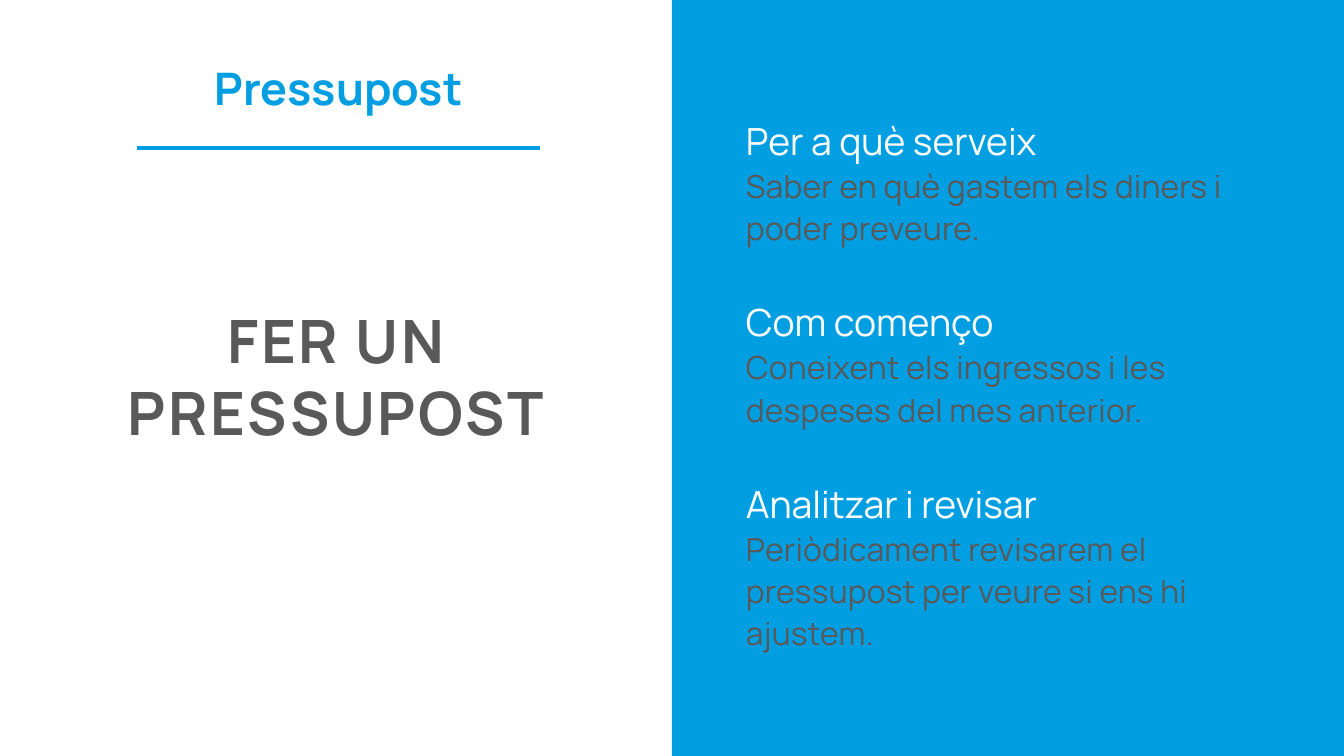
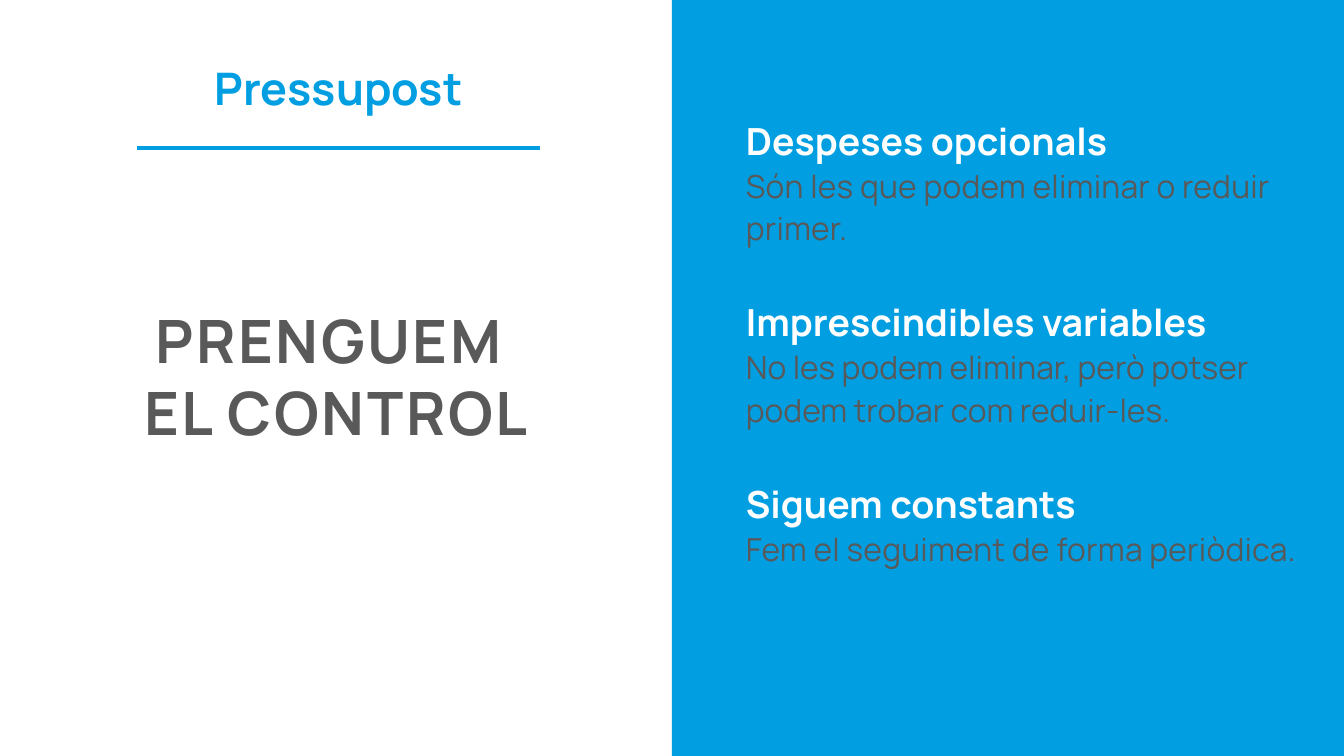
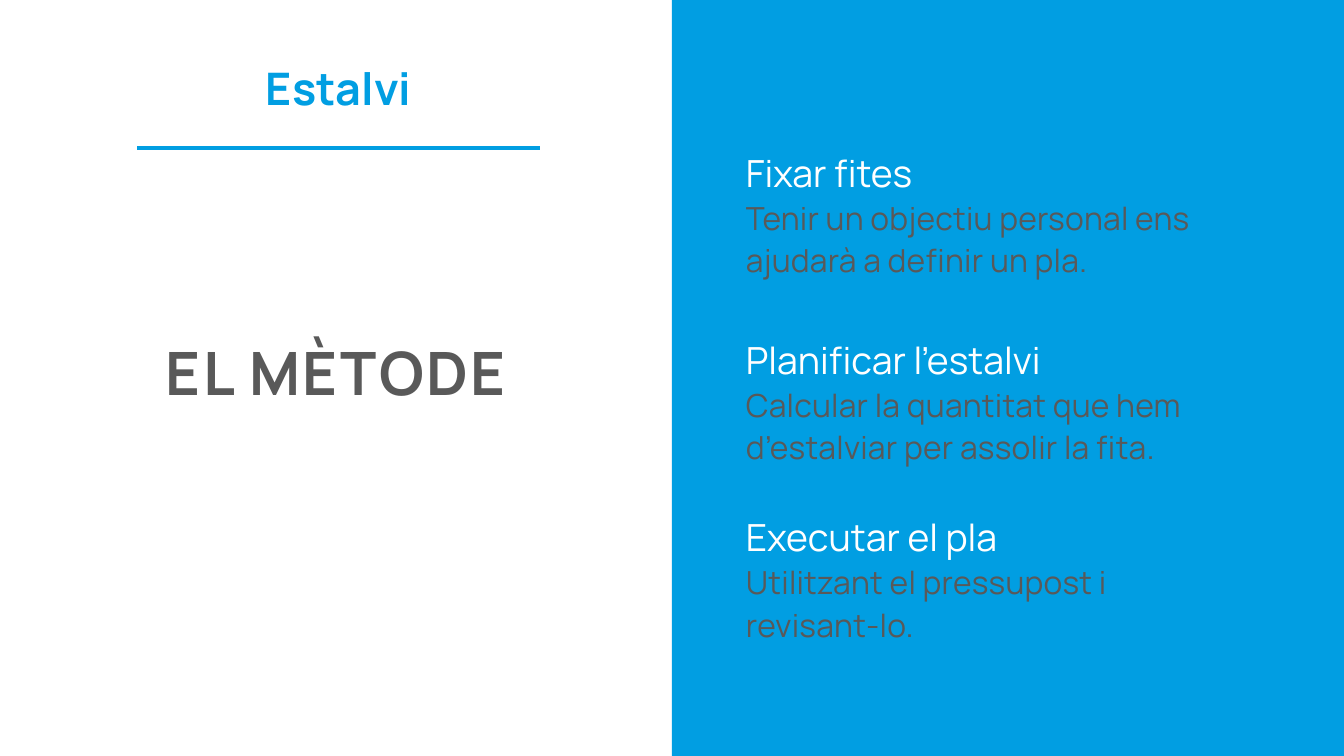
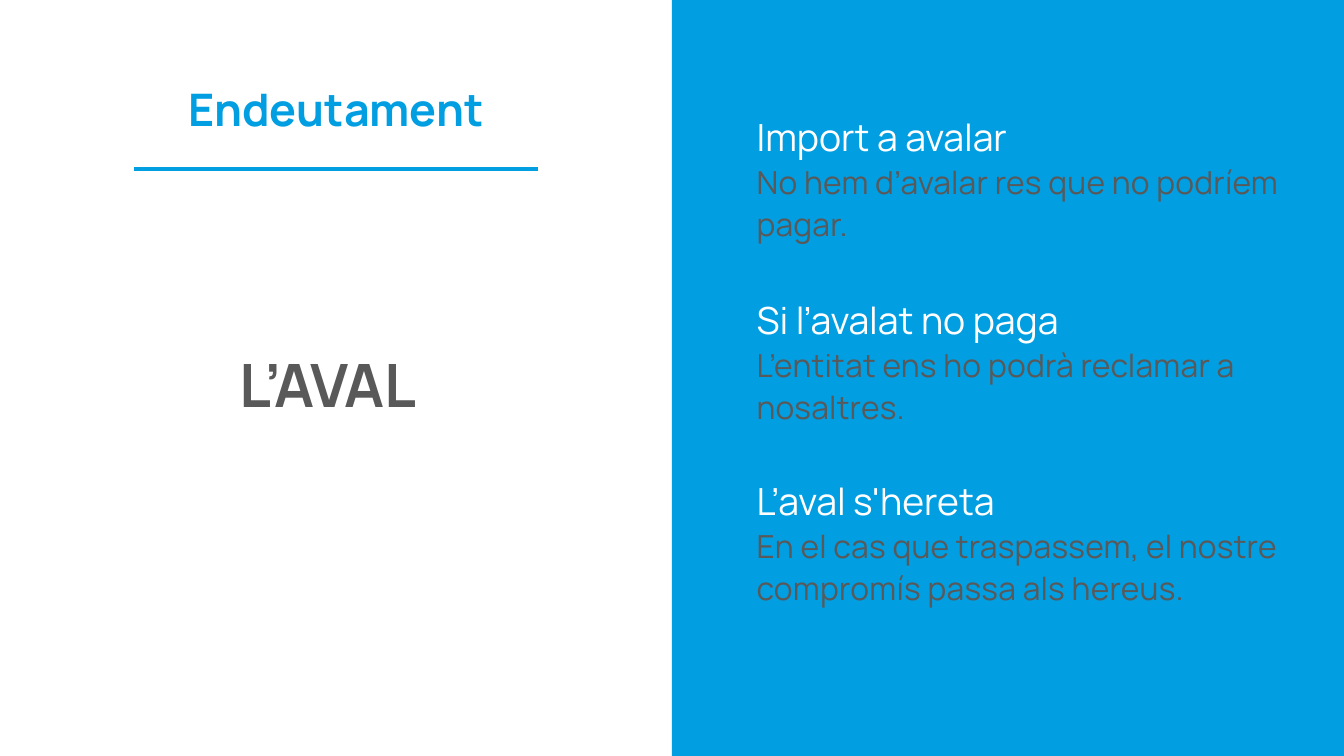
from lxml.etree import SubElement
from pptx import Presentation
from pptx.dml.color import RGBColor
from pptx.enum.shapes import MSO_CONNECTOR, MSO_SHAPE
from pptx.enum.text import MSO_ANCHOR, MSO_AUTO_SIZE, PP_ALIGN
from pptx.oxml.ns import qn
from pptx.util import Inches, Pt

# Content: each section is heading, detail, detail width, detail lines, tracking
SLIDES = [
    {
        "topic": "Pressupost",
        "headline": "FER UN\nPRESSUPOST",
        "sections": [
            ("Per a què serveix",
             "Saber en què gastem els diners i poder preveure.", 4.14, 2, 0.1),
            ("Com començo",
             "Coneixent els ingressos i les despeses del mes anterior.", 4.14, 2, 0.1),
            ("Analitzar i revisar",
             "Periòdicament revisarem el pressupost per veure si ens hi ajustem.", 4.14, 3, 0.1),
        ],
    },
    {
        "topic": "Pressupost",
        "headline": "PRENGUEM \nEL CONTROL",
        "bold_headings": True,
        "sections": [
            ("Despeses opcionals",
             "Són les que podem eliminar o reduir primer.", 4.14, 2, 0.1),
            ("Imprescindibles variables",
             "No les podem eliminar, però potser podem trobar com reduir-les.", 4.14, 2, 0),
            ("Siguem constants",
             "Fem el seguiment de forma periòdica.", 4.14, 3, 0.1),
        ],
    },
    {
        "topic": "Estalvi",
        "headline": "EL MÈTODE",
        "headline_box": (0, 2.5, 5, 0.54),
        "section_tops": (1.11, 2.5, 3.82),
        "sections": [
            ("Fixar fites",
             "Tenir un objectiu personal ens ajudarà a definir un pla.", 4.14, 2, 0.1),
            ("Planificar l’estalvi",
             "Calcular la quantitat que hem d’estalviar per assolir la fita.", 4.14, 2, 0.1),
            ("Executar el pla",
             "Utilitzant el pressupost i revisant-lo.", 3.55, 2, 0.1),
        ],
    },
    {
        "topic": "Endeutament",
        "topic_box": (0, 0.61, 5, 0.4),
        "rule": (1, 1.26),
        "headline": "L’AVAL",
        "headline_box": (0.67, 2.59, 3.54, 0.54),
        "headline_tracking": 0,
        "section_left": 5.63,
        "section_tops": (0.84, 2.2, 3.55),
        "sections": [
            ("Import a avalar",
             "No hem d’avalar res que no podríem pagar.", 4.14, 2, 0.1),
            ("Si l’avalat no paga",
             "L’entitat ens ho podrà reclamar a nosaltres.", 3.94, 2, 0.1),
            ("L’aval s'hereta",
             "En el cas que traspassem, el nostre compromís passa als hereus.", 4.14, 3, 0.1),
        ],
    },
]

# Shared look; a slide may override the layout values
COLORS = {"blue": "019EE2", "grey": "595959", "white": "FFFFFF"}
FONT = "Manrope"
LAYOUT = {
    "topic_box": (0.06, 0.45, 4.92, 0.4),
    "rule": (1.02, 1.1),
    "headline_box": (0, 2.26, 5, 1.08),
    "headline_tracking": 1.4,
    "section_left": 5.55,
    "section_tops": (0.87, 2.22, 3.57),
    "bold_headings": False,
}
SLIDE_W = 10
SLIDE_H = SLIDE_W * 9 / 16
RULE_W = 3
HEADING_W, HEADING_H = 4.14, 0.34
DETAIL_SIZE, DETAIL_LEADING = 17, 22.6


def color(name):
    return RGBColor.from_string(COLORS[name])


def write(shape, text, size, ink, bold=False, align=PP_ALIGN.LEFT,
          line_spacing=None, tracking=0):
    frame = shape.text_frame
    frame.text = text
    frame.word_wrap = True
    frame.auto_size = MSO_AUTO_SIZE.SHAPE_TO_FIT_TEXT
    frame.vertical_anchor = MSO_ANCHOR.TOP
    frame.margin_left = frame.margin_right = 0
    frame.margin_top = frame.margin_bottom = 0
    for paragraph in frame.paragraphs:
        paragraph.alignment = align
        if line_spacing:
            paragraph.line_spacing = Pt(line_spacing)
        for run in paragraph.runs:
            run.font.name = FONT
            run.font.size = Pt(size)
            run.font.bold = bold
            run.font.color.rgb = color(ink)
            if tracking:
                run.font._element.set("spc", str(round(tracking * 100)))


def add_panel(slide):
    panel = slide.shapes.add_shape(
        MSO_SHAPE.RECTANGLE, Inches(SLIDE_W / 2), 0, Inches(SLIDE_W / 2), Inches(SLIDE_H))
    panel.shadow.inherit = False
    panel.fill.solid()
    panel.fill.fore_color.rgb = color("blue")
    panel.line.fill.background()


def add_rule(slide, left, top):
    rule = slide.shapes.add_connector(
        MSO_CONNECTOR.STRAIGHT, Inches(left), Inches(top), Inches(left + RULE_W), Inches(top))
    rule.line.color.rgb = color("blue")
    rule.line.width = Pt(2.25)
    SubElement(rule._element.spPr, qn("a:effectLst"))


def add_section(slide, left, top, section, bold):
    heading_text, detail_text, detail_w, detail_lines, tracking = section
    group = slide.shapes.add_group_shape()
    heading = group.shapes.add_textbox(
        Inches(left), Inches(top), Inches(HEADING_W), Inches(HEADING_H))
    write(heading, heading_text, 20, "white", bold, line_spacing=24.6)
    detail = group.shapes.add_textbox(
        Inches(left), Inches(top + HEADING_H),
        Inches(detail_w), Pt(detail_lines * DETAIL_LEADING))
    write(detail, detail_text, DETAIL_SIZE, "grey",
          line_spacing=DETAIL_LEADING, tracking=tracking)


def build_slide(deck, content):
    part = {**LAYOUT, **content}
    slide = deck.slides.add_slide(deck.slide_layouts[5])
    add_panel(slide)

    # Left half: topic, rule and headline
    headline = slide.shapes.title
    headline.left, headline.top, headline.width, headline.height = map(
        Inches, part["headline_box"])
    write(headline, part["headline"], 32, "grey", True, PP_ALIGN.CENTER,
          tracking=part["headline_tracking"])
    topic = slide.shapes.add_textbox(*map(Inches, part["topic_box"]))
    write(topic, part["topic"], 24, "blue", True, PP_ALIGN.CENTER)
    add_rule(slide, *part["rule"])

    # Right half: the three sections
    for top, section in zip(part["section_tops"], part["sections"]):
        add_section(slide, part["section_left"], top, section, part["bold_headings"])


def main():
    deck = Presentation()
    deck.slide_width, deck.slide_height = Inches(SLIDE_W), Inches(SLIDE_H)
    for content in SLIDES:
        build_slide(deck, content)
    deck.save("out.pptx")


if __name__ == "__main__":
    main()
